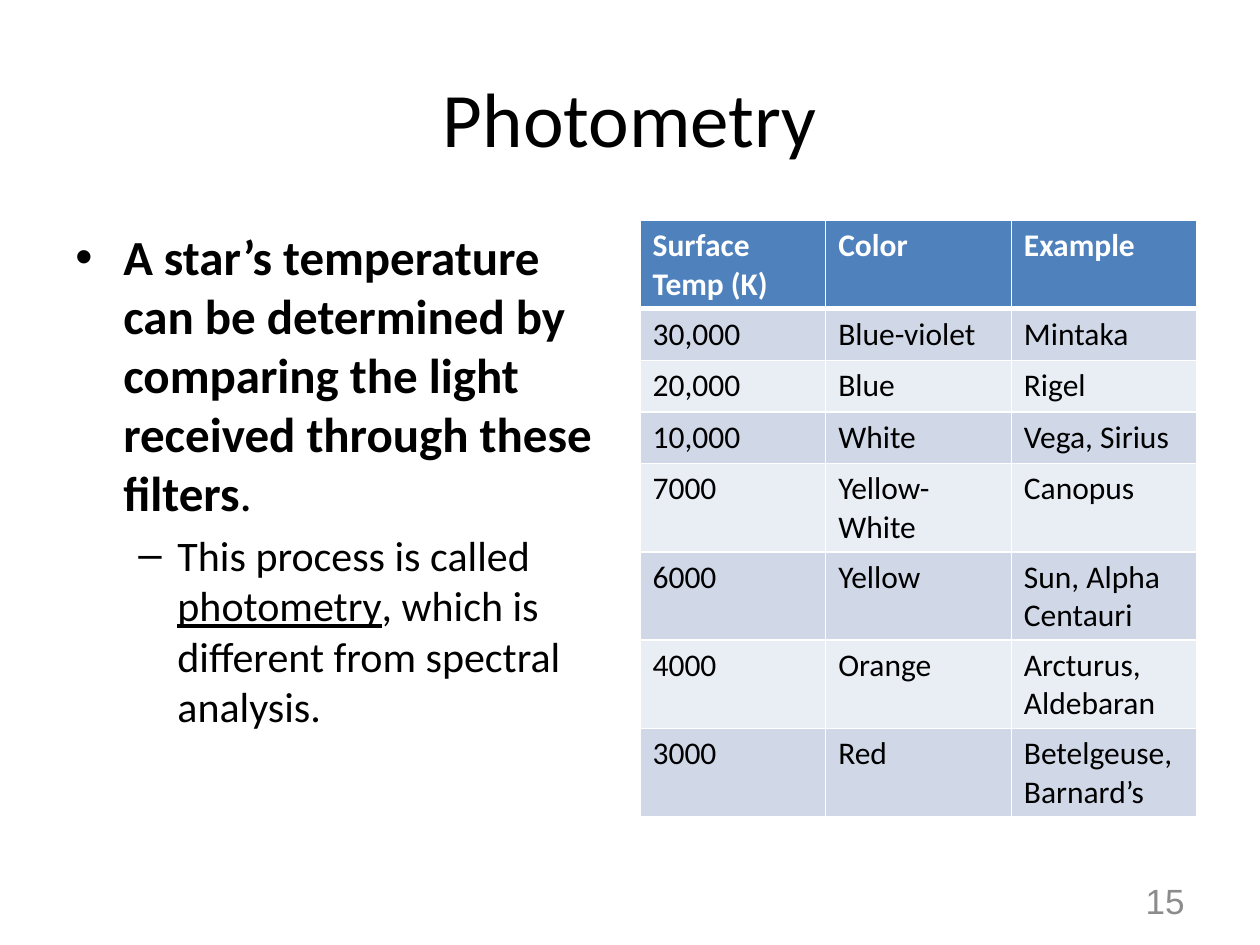
"""Build the Photometry slide with star temperatures, colors and examples."""
import pptx
import pptx.dml.color
import pptx.enum.text
import pptx.oxml
import pptx.oxml.ns
import pptx.util

Inches = pptx.util.Inches
Pt = pptx.util.Pt
ALIGN = pptx.enum.text.PP_ALIGN
ANCHOR = pptx.enum.text.MSO_ANCHOR


def paint(target, color):
    target.rgb = pptx.dml.color.RGBColor.from_string(color)


def add_run(paragraph, text, color, **font_format):
    run = paragraph.add_run()
    run.text = text
    for name, value in {"name": "Calibri", **font_format}.items():
        setattr(run.font, name, value)
    run.font.fill.solid()
    paint(run.font.fill.fore_color, color)


presentation = pptx.Presentation()
presentation.slide_width = Inches(10)
presentation.slide_height = Inches(7.5)
slide = presentation.slides.add_slide(presentation.slide_layouts[6])

bold = {"size": Pt(28), "bold": True}
plain = {"size": Pt(24)}
text_boxes = [
    ((0.5, 0.3, 9, 1.25), ANCHOR.MIDDLE, [
        {"align": ALIGN.CENTER, "runs": [("Photometry", "000000", {"size": Pt(44)})]},
    ]),
    ((0.5, 1.75, 4.42, 4.95), ANCHOR.TOP, [
        {"bullet": "•", "indent": (0.38, -0.38), "runs": [
            ("A star’s temperature can be determined by comparing the light "
             "received through these filters", "000000", bold),
            (".", "000000", {"size": Pt(28)}),
        ]},
        {"bullet": "–", "indent": (0.81, -0.31), "level": 1, "before": 4.8, "runs": [
            ("This process is called ", "000000", plain),
            ("photometry", "000000", {**plain, "underline": True}),
            (", which is different from spectral analysis.", "000000", plain),
        ]},
    ]),
    ((7.17, 6.95, 2.33, 0.4), ANCHOR.MIDDLE, [
        {"align": ALIGN.RIGHT,
         "runs": [("15", "8C8C8C", {"size": Pt(20), "name": "Arial"})]},
    ]),
]

for box, anchor, paragraphs in text_boxes:
    frame = slide.shapes.add_textbox(*map(Inches, box)).text_frame
    frame.word_wrap = True
    frame.vertical_anchor = anchor
    for index, content in enumerate(paragraphs):
        paragraph = frame.add_paragraph() if index else frame.paragraphs[0]
        paragraph.alignment = content.get("align", ALIGN.LEFT)
        paragraph.level = content.get("level", 0)
        paragraph.space_before = Pt(content.get("before", 0))
        if "bullet" in content:
            properties = paragraph._p.get_or_add_pPr()
            margin, indent = content["indent"]
            properties.set("marL", str(Inches(margin)))
            properties.set("indent", str(Inches(indent)))
            for tag, attribute, value in (("buFont", "typeface", "Arial"),
                                          ("buChar", "char", content["bullet"])):
                bullet = pptx.oxml.parse_xml(
                    f'<a:{tag} {pptx.oxml.ns.nsdecls("a")} {attribute}="{value}"/>')
                properties.append(bullet)
        for text, color, font_format in content["runs"]:
            add_run(paragraph, text, color, **font_format)

stars = [
    ("Surface Temp (K)", "Color", "Example"),
    ("30,000", "Blue-violet", "Mintaka"),
    ("20,000", "Blue", "Rigel"),
    ("10,000", "White", "Vega, Sirius"),
    ("7000", "Yellow-White", "Canopus"),
    ("6000", "Yellow", "Sun, Alpha Centauri"),
    ("4000", "Orange", "Arcturus, Aldebaran"),
    ("3000", "Red", "Betelgeuse, Barnard’s"),
]
two_line_rows = (0, 4, 5, 6, 7)
table = slide.shapes.add_table(
    len(stars), 3, Inches(5.08), Inches(1.75), Inches(4.42), Inches(4.72)).table

for row_index, values in enumerate(stars):
    header = row_index == 0
    table.rows[row_index].height = Inches(0.7 if row_index in two_line_rows else 0.41)
    fill_color = "4F81BD" if header else ("E9EDF4", "D0D8E8")[row_index % 2]
    for column_index, text in enumerate(values):
        cell = table.cell(row_index, column_index)
        properties = cell._tc.get_or_add_tcPr()
        widths = {"L": 1, "R": 1, "T": 3 if row_index == 1 else 1, "B": 3 if header else 1}
        for side, width in widths.items():
            properties.append(pptx.oxml.parse_xml(
                f'<a:ln{side} {pptx.oxml.ns.nsdecls("a")} w="{Pt(width)}"><a:solidFill>'
                f'<a:srgbClr val="FFFFFF"/></a:solidFill></a:ln{side}>'))
        cell.fill.solid()
        paint(cell.fill.fore_color, fill_color)
        add_run(cell.text_frame.paragraphs[0], text,
                "FFFFFF" if header else "000000", size=Pt(18), bold=header)

presentation.save("out.pptx")
